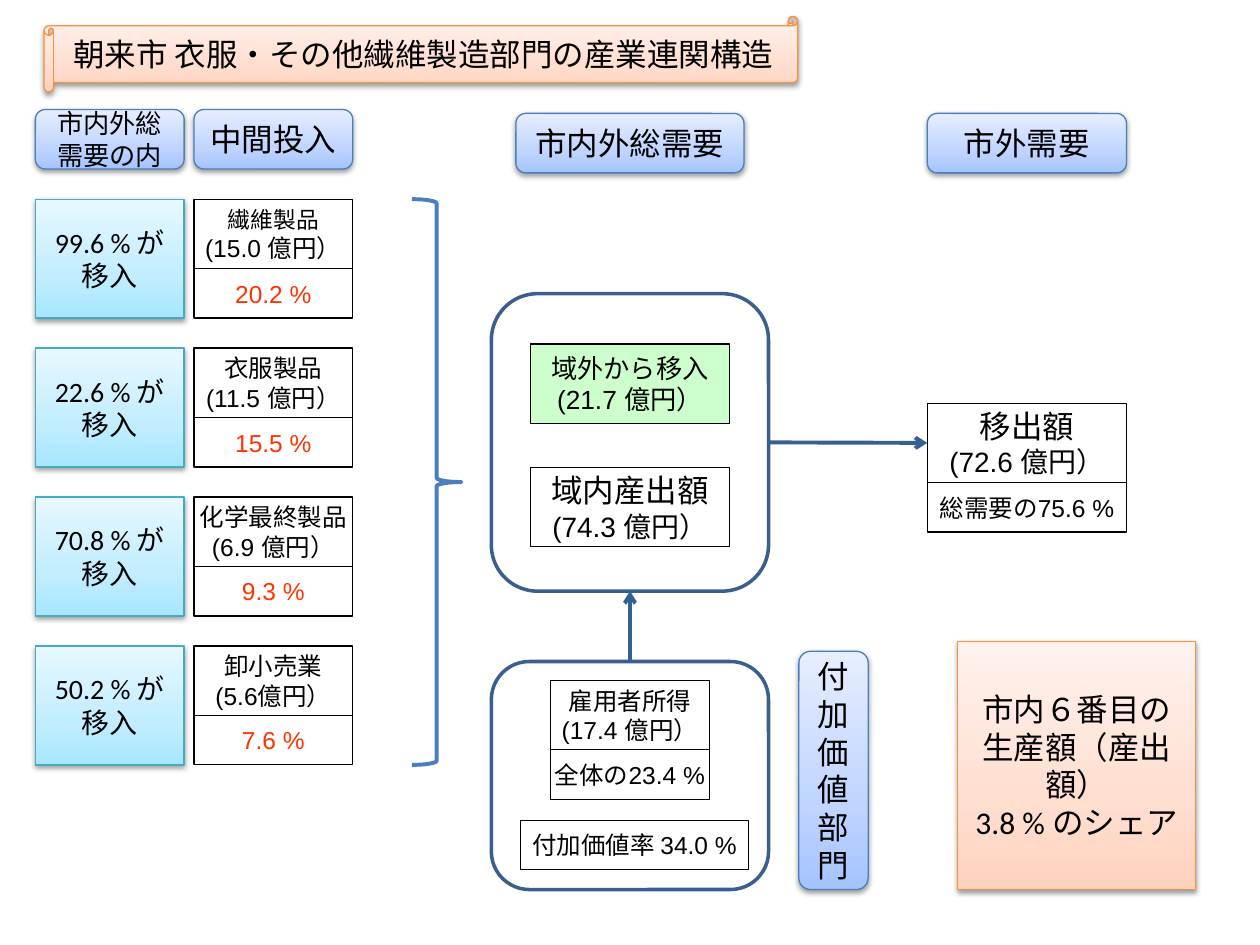
import copy
import pptx
import pptx.util
import pptx.dml.color
import pptx.enum.shapes
import pptx.enum.text
import pptx.oxml
import pptx.oxml.ns
from lxml import etree

Pt = pptx.util.Pt
SHAPE = pptx.enum.shapes.MSO_SHAPE
COLORS = {
    "text": "000000", "share": "FF3300", "import": "CCFFCC",
    "frame": "3A5F8C", "arrow": "376092", "brace": "4B7EBC",
}
THEMES = {
    "blue": {"line": "4B7EBC", "stops": ("A4C4FF", "BFD4FF", "E6EEFF")},
    "aqua": {"line": "46AAC5", "stops": ("A7E6FF", "C1EDFF", "E7F8FF")},
    "orange": {"line": "F69240", "stops": ("FFD2BD", "FFDED0", "FFF2ED")},
}
SHADOW = (
    '<a:outerShdw xmlns:a="http://schemas.openxmlformats.org/drawingml/2006/main" '
    'blurRad="40000" dist="20000" dir="5400000" rotWithShape="0">'
    '<a:srgbClr val="000000"><a:alpha val="38000"/></a:srgbClr></a:outerShdw>'
)
FRAME_FORMAT = {"vertical_anchor": pptx.enum.text.MSO_ANCHOR.MIDDLE}


def rgb(value):
    return pptx.dml.color.RGBColor.from_string(value)


def apply_format(target, values):
    for name, value in values.items():
        setattr(target, name, value)


def add_outline(slide, kind, box, line, width=0.75):
    outline = slide.shapes.add_shape(kind, *(Pt(v) for v in box))
    outline.shadow.inherit = False
    outline.fill.background()
    outline.line.color.rgb = rgb(line)
    outline.line.width = Pt(width)
    return outline


def write_lines(holder, lines, font, color=COLORS["text"], wrap=True):
    frame = holder.text_frame
    apply_format(frame, {**FRAME_FORMAT, "word_wrap": wrap})
    for index, (text, size) in enumerate(lines):
        paragraph = frame.paragraphs[0] if index == 0 else frame.add_paragraph()
        paragraph.alignment = pptx.enum.text.PP_ALIGN.CENTER
        run = paragraph.add_run()
        run.text = text
        apply_format(run.font, {"name": font, "size": Pt(size)})
        run.font.color.rgb = rgb(color)


def add_cell(slide, box, *lines, color=COLORS["text"]):
    cell = add_outline(slide, SHAPE.RECTANGLE, box, COLORS["text"])
    write_lines(cell, lines, "Arial", color, wrap=False)
    return cell


def add_card(slide, kind, box, theme, *lines):
    card = add_outline(slide, kind, box, THEMES[theme]["line"])
    card.fill.gradient()
    card.fill.gradient_angle = 90
    stops = card.fill.gradient_stops
    for stop, color in zip(stops, THEMES[theme]["stops"][::2]):
        stop.color.rgb = rgb(color)
    stop_list = card._element.spPr.find(".//" + pptx.oxml.ns.qn("a:gsLst"))
    stop_list.insert(1, copy.deepcopy(stop_list[0]))
    middle = card.fill.gradient_stops[1]
    middle.position = 0.35
    middle.color.rgb = rgb(THEMES[theme]["stops"][1])
    effects = card._element.spPr.find(pptx.oxml.ns.qn("a:effectLst"))
    effects.append(pptx.oxml.parse_xml(SHADOW))
    write_lines(card, lines, "Calibri")


def add_header(slide, box, text, size=18):
    add_card(slide, SHAPE.ROUNDED_RECTANGLE, box, "blue", (text, size))


def add_arrow(slide, start, start_site, end, end_site):
    arrow = slide.shapes.add_connector(pptx.enum.shapes.MSO_CONNECTOR.STRAIGHT, 0, 0, 0, 0)
    arrow.begin_connect(start, start_site)
    arrow.end_connect(end, end_site)
    arrow.line.color.rgb = rgb(COLORS["arrow"])
    arrow.line.width = Pt(2.25)
    line = arrow.line._get_or_add_ln()
    etree.SubElement(line, pptx.oxml.ns.qn("a:tailEnd"), type="arrow")
    etree.SubElement(arrow._element.spPr, pptx.oxml.ns.qn("a:effectLst"))


def build_inputs(slide, box, rows):
    left, top, width, height = box
    cell_left, cell_width, import_width = left + 90.7, 90.7, 85
    row_height, label_height, first_row = 68, 39.7, 51.2
    pitch = (height - first_row - row_height) / (len(rows) - 1)
    add_header(slide, (left, top, import_width, 34), "市内外総需要の内", 15)
    add_header(slide, (cell_left, top, cell_width, 34), "中間投入")
    for index, (name, name_size, amount, share, imported) in enumerate(rows):
        y = top + first_row + index * pitch
        add_card(slide, SHAPE.RECTANGLE, (left, y, import_width, row_height), "aqua",
                 *((text, 16) for text in imported))
        add_cell(slide, (cell_left, y, cell_width, label_height),
                 (name, name_size), (amount, 14))
        add_cell(slide, (cell_left, y + label_height, cell_width, row_height - label_height),
                 (share, 14), color=COLORS["share"])
    add_outline(slide, SHAPE.RIGHT_BRACE,
                (left + width - 28.3, top + first_row, 28.3, height - first_row),
                COLORS["brace"], 2.25)


def build_demand(slide, box):
    left, top, width, height = box
    add_header(slide, (left + 14, top, 130.3, 34), "市内外総需要")
    frame = add_outline(slide, SHAPE.ROUNDED_RECTANGLE,
                        (left, top + 103, width, height - 103), COLORS["frame"], 2)
    x = left + (width - 113.8) / 2
    imports = add_cell(slide, (x, top + 131.8, 113.8, 45.4),
                       ("域外から移入", 15), ("(21.7 億円）", 15))
    imports.fill.solid()
    imports.fill.fore_color.rgb = rgb(COLORS["import"])
    add_cell(slide, (x, top + 202.3, 113.8, 45.4), ("域内産出額", 18), ("(74.3 億円）", 16))
    return frame


def build_exports(slide, box):
    left, top, width, height = box
    add_header(slide, (left, top, width, 34), "市外需要")
    exports = add_cell(slide, (left, top + height - 73.7, width, 45.4),
                       ("移出額", 18), ("(72.6 億円）", 16))
    add_cell(slide, (left, top + height - 28.3, width, 28.3), ("総需要の75.6 %", 14))
    return exports


def build_added_value(slide, box):
    left, top, width, height = box
    frame_width = 158.4
    frame = add_outline(slide, SHAPE.ROUNDED_RECTANGLE,
                        (left, top + 5.8, frame_width, height - 5.8), COLORS["frame"], 2)
    x = left + (frame_width - 90.7) / 2
    add_cell(slide, (x, top + 16.6, 90.7, 39.7), ("雇用者所得", 14), ("(17.4 億円）", 14))
    add_cell(slide, (x, top + 56.3, 90.7, 28.3), ("全体の23.4 %", 14))
    add_cell(slide, (left + 16.6, top + 96.5, 130.3, 28.3), ("付加価値率 34.0 %", 14))
    add_header(slide, (left + width - 39.6, top, 39.6, height), "付加価値部門")
    return frame


def build_title(slide, box):
    add_card(slide, SHAPE.HORIZONTAL_SCROLL, box, "orange",
             ("朝来市 衣服・その他繊維製造部門の産業連関構造", 18))


def build_output_share(slide, box):
    add_card(slide, SHAPE.FLOWCHART_PROCESS, box, "orange",
             ("市内６番目の生産額（産出額）", 18), ("3.8 % のシェア", 18))


def main():
    deck = pptx.Presentation()
    apply_format(deck, {"slide_width": Pt(720), "slide_height": Pt(540)})
    slide = deck.slides.add_slide(deck.slide_layouts[6])
    input_rows = [
        ("繊維製品", 13, "(15.0 億円）", "20.2 %", ("99.6 % が", "移入")),
        ("衣服製品", 14, "(11.5 億円）", "15.5 %", ("22.6 % が移入",)),
        ("化学最終製品", 14, "(6.9 億円）", "9.3 %", ("70.8 % が", "移入")),
        ("卸小売業", 14, "(5.6億円）", "7.6 %", ("50.2 % が", "移入")),
    ]
    build_title(slide, (25.2, 9.4, 430.6, 43.2))
    build_inputs(slide, (20.2, 62.6, 243.5, 374.5), input_rows)
    demand = build_demand(slide, (280.8, 64.8, 158.4, 273))
    exports = build_exports(slide, (529.9, 64.8, 113.8, 239.3))
    added_value = build_added_value(slide, (280.8, 372.2, 215.3, 136.1))
    build_output_share(slide, (547.2, 366.5, 136.1, 141.8))
    add_arrow(slide, demand, 3, exports, 1)
    add_arrow(slide, added_value, 0, demand, 2)
    deck.save("out.pptx")


if __name__ == "__main__":
    main()
